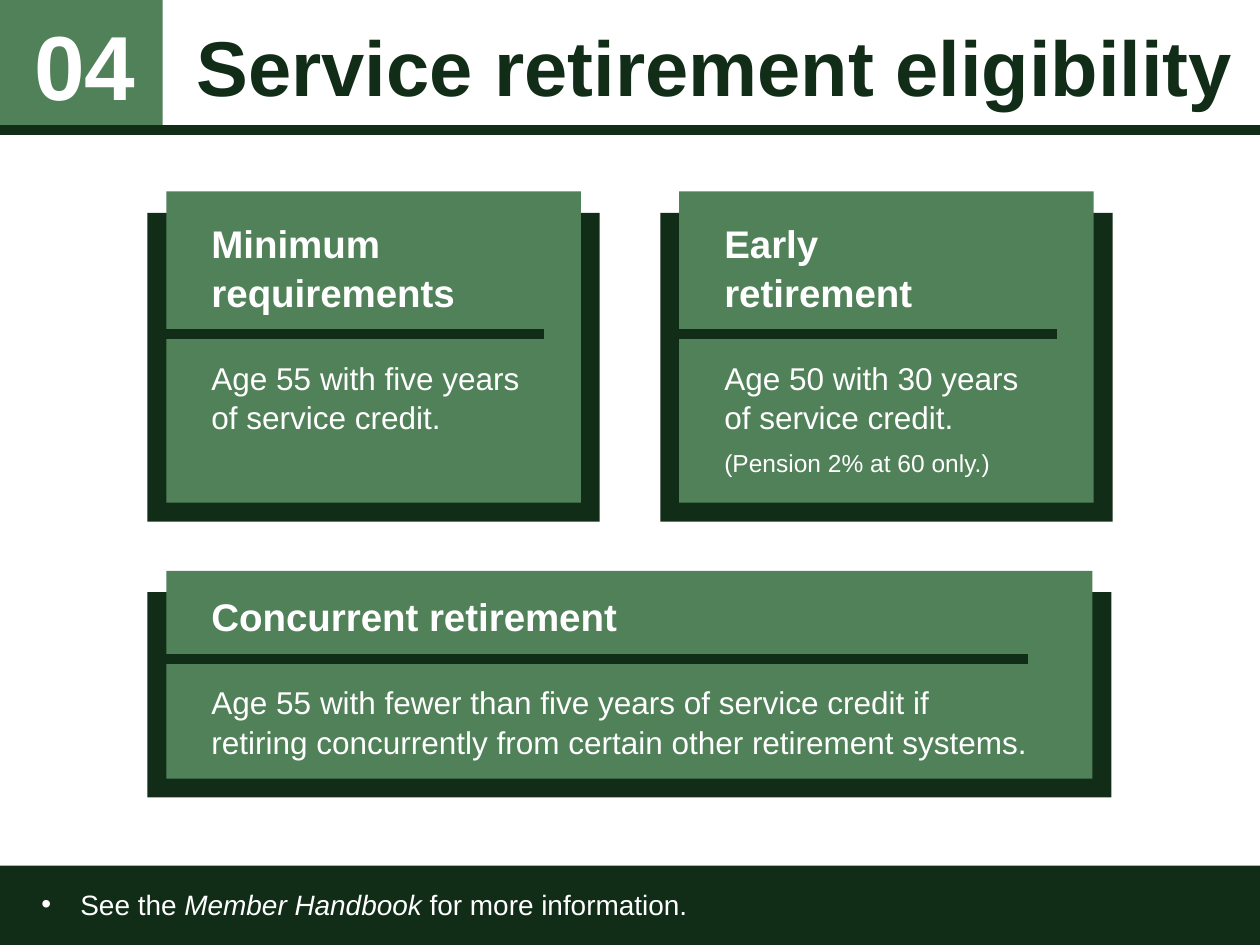
from lxml import etree
from pptx import Presentation
from pptx.dml.color import RGBColor
from pptx.enum.shapes import MSO_CONNECTOR, MSO_SHAPE
from pptx.enum.text import MSO_ANCHOR, MSO_AUTO_SIZE, PP_ALIGN
from pptx.oxml.ns import qn
from pptx.util import Inches, Pt

RECT, STRAIGHT = MSO_SHAPE.RECTANGLE, MSO_CONNECTOR.STRAIGHT
MIDDLE, NO_FIT = MSO_ANCHOR.MIDDLE, MSO_AUTO_SIZE.NONE
LEFT, CENTER = PP_ALIGN.LEFT, PP_ALIGN.CENTER
DARK = RGBColor(0x11, 0x2D, 0x18)
GREEN = RGBColor(0x51, 0x81, 0x59)
WHITE = RGBColor(0xFF, 0xFF, 0xFF)

TITLE = {"size": Pt(44.4), "bold": True}
NUMBER = {"size": Pt(52), "bold": True}
HEAD = {"size": Pt(22), "bold": True}
BODY = {"size": Pt(18), "bold": False}
SMALL = {"size": Pt(14), "bold": False}
FOOT = {"size": Pt(16), "italic": False}
FOOT_ITALIC = {"size": Pt(16), "italic": True}

prs = Presentation()
prs.slide_width, prs.slide_height = Inches(10), Inches(7.5)
s = prs.slides.add_slide(prs.slide_layouts[5])
W, H = 10, 7.5
BAND = 1.03  # height of the header


def add_bar(x, y, w, h, color):
    """Filled rectangle, or a thick rule when h is zero."""
    if h:
        sp = s.shapes.add_shape(RECT, Inches(x), Inches(y), Inches(w), Inches(h))
        sp.shadow.inherit = False
        sp.fill.solid()
        sp.fill.fore_color.rgb = color
        sp.line.fill.background()
    else:
        sp = s.shapes.add_connector(STRAIGHT, Inches(x), Inches(y), Inches(x + w), Inches(y))
        sp.line.color.rgb = color
        sp.line.width = Pt(6)
        etree.SubElement(sp._element.spPr, qn("a:effectLst"))


def write(p, text, fmt, color=WHITE, spacing=1.05):
    """Append text to a paragraph; a newline becomes a line break."""
    p.line_spacing = spacing
    for i, part in enumerate(text.split("\n")):
        if i:
            p.add_line_break()
        r = p.add_run()
        r.text = part
        r.font.name = "Arial"
        r.font.color.rgb = color
        for name, value in fmt.items():
            setattr(r.font, name, value)


# Title
sp = s.shapes.title
sp.left, sp.top, sp.width, sp.height = (Inches(v) for v in (1.46, 0.01, 8.46, 1.02))
tf = sp.text_frame
tf.word_wrap, tf.auto_size, tf.vertical_anchor = True, NO_FIT, MIDDLE
tf.margin_right = 0
tf.paragraphs[0].alignment = LEFT
write(tf.paragraphs[0], "Service retirement eligibility", TITLE, DARK, 1.0)

# Section number and header rule
add_bar(0, 0, 1.29, BAND, GREEN)
tf = s.shapes.add_textbox(Inches(0.17), Inches(0.08), Inches(1.01), Inches(0.96)).text_frame
tf.word_wrap, tf.vertical_anchor = True, MIDDLE
tf.paragraphs[0].alignment = CENTER
write(tf.paragraphs[0], "04", NUMBER, spacing=0.9)
add_bar(0, BAND, W, 0, DARK)

# Footer
add_bar(0, 6.87, W, H - 6.87, DARK)
tf = s.shapes.add_textbox(Inches(0.23), Inches(6.98), Inches(9.59), Inches(0.37)).text_frame
tf.word_wrap = True
p = tf.paragraphs[0]
pPr = p._p.get_or_add_pPr()
pPr.set("marL", str(Inches(0.31)))
pPr.set("indent", str(-Inches(0.31)))
etree.SubElement(pPr, qn("a:buFont")).set("typeface", "Arial")
etree.SubElement(pPr, qn("a:buChar")).set("char", "•")
for text, fmt in (("See the ", FOOT), ("Member Handbook", FOOT_ITALIC),
                  (" for more information.", FOOT)):
    write(p, text, fmt)

# Cards: left, top, width, height, text top, text width, rule top, rule width, paragraphs
COL1, COL2, ROW1, ROW2 = 1.17, 5.24, 1.69, 4.7
cards = [
    (COL1, ROW2, 7.65, 1.63, 4.64, 6.72, 5.23, 6.84, [
        ("Concurrent retirement", HEAD, 24),
        ("Age 55 with fewer than five years of service credit if retiring "
         "concurrently from certain other retirement systems.", BODY, 24)]),
    (COL1, ROW1, 3.59, 2.45, 1.68, 2.75, 2.65, 3.0, [
        ("Minimum requirements", HEAD, 24),
        ("Age 55 with five years of service credit.", BODY, 24)]),
    (COL2, ROW1, 3.59, 2.45, 1.68, 2.75, 2.65, 3.0, [
        ("Early \nretirement", HEAD, 24),
        ("Age 50 with 30 years of service credit.", BODY, 6),
        ("(Pension 2% at 60 only.)", SMALL, 6)]),
]
for x, y, w, h, text_y, text_w, rule_y, rule_w, paragraphs in cards:
    add_bar(x, y, w, h, DARK)
    add_bar(x + 0.15, y - 0.17, w - 0.3, h + 0.02, GREEN)
    tf = s.shapes.add_textbox(Inches(x + 0.41), Inches(text_y), Inches(text_w),
                              Inches(y + h - text_y - 0.25)).text_frame
    tf.word_wrap = True
    for i, (text, fmt, after) in enumerate(paragraphs):
        p = tf.add_paragraph() if i else tf.paragraphs[0]
        p.space_after = Pt(after)
        write(p, text, fmt)
    add_bar(x + 0.15, rule_y, rule_w, 0, DARK)

prs.save("out.pptx")
